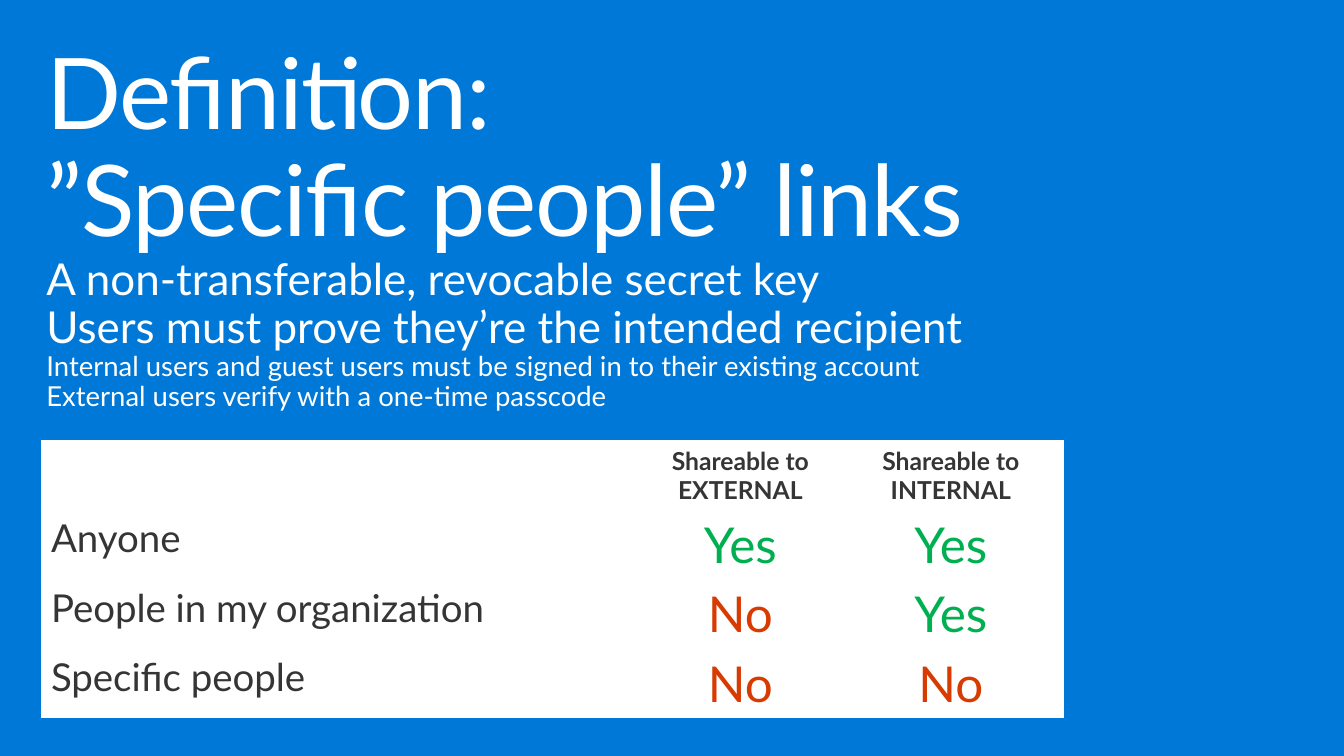
from pptx import Presentation
from pptx.dml.color import RGBColor
from pptx.enum import text
from pptx.util import Pt

BLUE = RGBColor(0x00, 0x78, 0xD7)
WHITE = RGBColor(0xFF, 0xFF, 0xFF)
DARK = RGBColor(0x35, 0x35, 0x35)
GREEN = RGBColor(0x00, 0xB0, 0x50)
RED = RGBColor(0xD8, 0x3B, 0x01)
FACE = "Lato"

LINES = [
    ("Definition:", 72, -1),
    ("”Specific people” links", 72, -1),
    ("A non-transferable, revocable secret key", 32, 0),
    ("Users must prove they’re the intended recipient", 32, 0),
    ("Internal users and guest users must be signed in to their existing account", 20, 0),
    ("External users verify with a one-time passcode", 20, 0),
]
GRID = [
    ("", "Shareable to EXTERNAL", "Shareable to INTERNAL"),
    ("Anyone", "Yes", "Yes"),
    ("People in my organization", "No", "Yes"),
    ("Specific people", "No", "No"),
]
COLS = (437.8, 143.3, 163.4)
HEAD = {"size": Pt(18), "bold": True}
LABEL = {"size": Pt(28), "bold": False}
MARK = {"size": Pt(36), "bold": False}
TINTS = {"Yes": GREEN, "No": RED}


def style(run, color, form):
    """Set the face, colour and format values of a run."""
    run.font.color.rgb = color
    for key, value in {"name": FACE, **form}.items():
        setattr(run.font, key, value)


def add_title(slide, left, top, width, height):
    """Write the definition lines in the given box."""
    box = slide.shapes.add_textbox(Pt(left), Pt(top), Pt(width), Pt(height))
    frame = box.text_frame
    form = {"word_wrap": True, "margin_left": Pt(11.5), "margin_right": Pt(11.5),
            "margin_top": Pt(7.2), "margin_bottom": Pt(7.2)}
    for key, value in form.items():
        setattr(frame, key, value)
    for i, (words, size, space) in enumerate(LINES):
        para = frame.add_paragraph() if i else frame.paragraphs[0]
        para.line_spacing = 0.9
        run = para.add_run()
        run.text = words
        style(run, WHITE, {"size": Pt(size)})
        if space:
            run._r.get_or_add_rPr().set("spc", str(space * 100))


def add_grid(slide, left, top, width, height):
    """Fill the given box with the sharing table."""
    table = slide.shapes.add_table(
        len(GRID), len(COLS), Pt(left), Pt(top), Pt(width), Pt(height)).table
    table.horz_banding = False
    for col, share in zip(table.columns, COLS):
        col.width = Pt(width * share / sum(COLS))
    for r, row in enumerate(GRID):
        table.rows[r].height = Pt(height / len(GRID))
        for c, words in enumerate(row):
            cell = table.cell(r, c)
            cell.fill.solid()
            cell.fill.fore_color.rgb = WHITE
            para = cell.text_frame.paragraphs[0]
            if r == 0:
                cell.vertical_anchor = text.MSO_ANCHOR.BOTTOM
            if c:
                para.alignment = text.PP_ALIGN.CENTER
            if words:
                run = para.add_run()
                run.text = words
                form = HEAD if r == 0 else MARK if c else LABEL
                style(run, TINTS.get(words, DARK), form)


def main():
    """Build and save the slide."""
    deck = Presentation()
    deck.slide_width, deck.slide_height = Pt(979.2), Pt(550.8)
    slide = deck.slides.add_slide(deck.slide_layouts[6])
    slide.background.fill.solid()
    slide.background.fill.fore_color.rgb = BLUE
    add_title(slide, 22.3, 25.2, 936, 285)
    add_grid(slide, 30, 321.2, 744.5, 201.6)
    deck.save("out.pptx")


if __name__ == "__main__":
    main()
